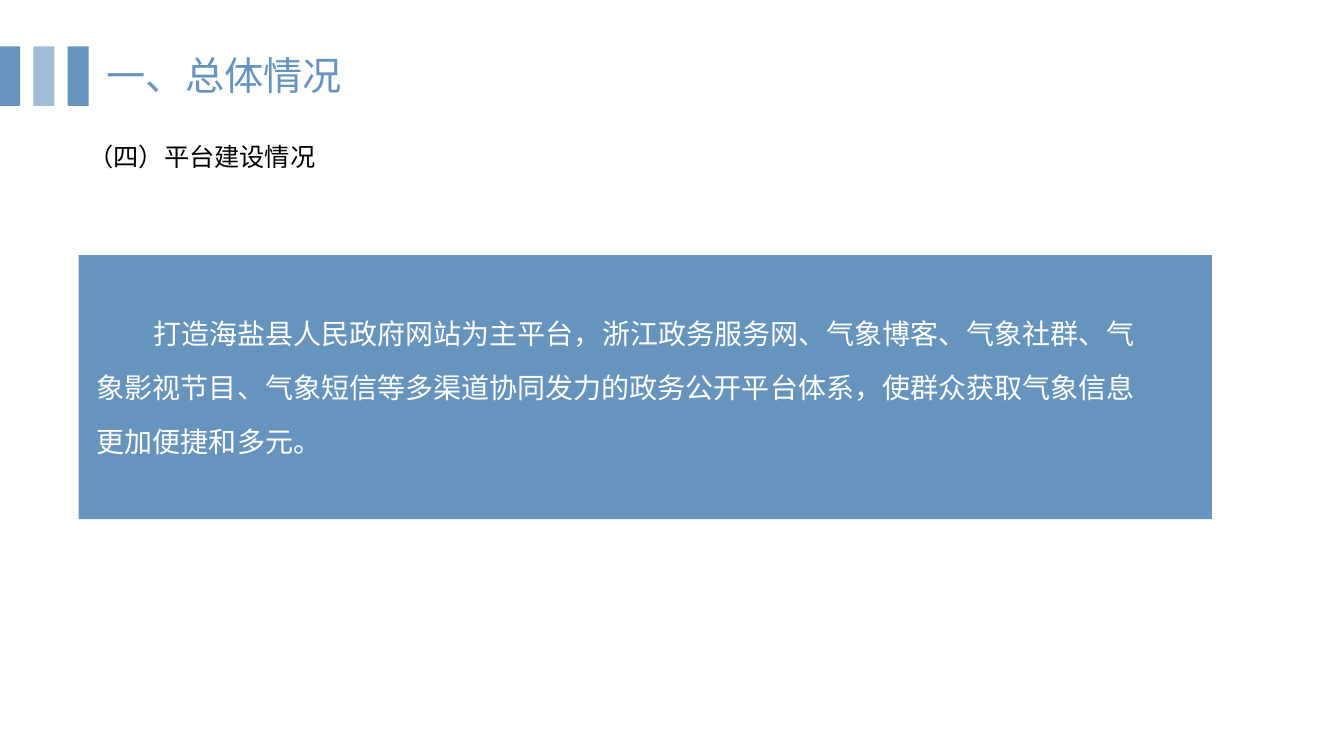
from dataclasses import dataclass

from lxml import etree
from pptx import Presentation
from pptx import util as u
from pptx.dml.color import RGBColor
from pptx.enum import shapes, text
from pptx.oxml import ns
from pptx.shapes.autoshape import Shape
from pptx.slide import Slide

EMU_PER_PX = 9144
FONT = "Noto Sans CJK SC"
BLUE = RGBColor(0x67, 0x94, 0xBD)
PALE_BLUE = RGBColor(0xA1, 0xBD, 0xD7)
WHITE = RGBColor(0xFF, 0xFF, 0xFF)
BLACK = RGBColor(0x00, 0x00, 0x00)


@dataclass(frozen=True)
class Block:
    left: int
    top: int
    width: int
    height: int
    color: RGBColor


STRIPES = [
    Block(34 * index - 1, 46, 21, 59, color)
    for index, color in enumerate((BLUE, PALE_BLUE, BLUE))
]
PANEL = Block(78, 253, 1124, 262, BLUE)


def px(length: int) -> u.Emu:
    return u.Emu(length * EMU_PER_PX)


def draw_block(page: Slide, block: Block) -> None:
    box = page.shapes.add_shape(
        shapes.MSO_SHAPE.RECTANGLE,
        px(block.left), px(block.top), px(block.width), px(block.height),
    )
    box.shadow.inherit = False
    box.fill.solid()
    box.fill.fore_color.rgb = block.color
    box.line.fill.background()


def place(box: Shape, left: int, top: int, width: int, height: int) -> Shape:
    box.left, box.top, box.width, box.height = map(px, (left, top, width, height))
    return box


def write(
    box: Shape,
    wording: str,
    *,
    size: int,
    color: RGBColor,
    inset_x: int = 10,
    inset_y: int = 5,
    indent: int = 0,
    line_spacing: float = 1.0,
) -> None:
    frame = box.text_frame
    frame.word_wrap = True
    frame.auto_size = text.MSO_AUTO_SIZE.NONE
    frame.vertical_anchor = text.MSO_ANCHOR.TOP
    frame.margin_left = frame.margin_right = px(inset_x)
    frame.margin_top = frame.margin_bottom = px(inset_y)
    para = frame.paragraphs[0]
    para.alignment = text.PP_ALIGN.LEFT
    para.line_spacing = line_spacing
    if indent:
        properties = para._p.get_or_add_pPr()
        properties.set("marL", "0")
        properties.set("indent", str(px(indent)))
    span = para.add_run()
    span.text = wording
    span.font.size = u.Pt(size)
    span.font.name = FONT
    span.font.color.rgb = color
    east_asian = etree.SubElement(span._r.get_or_add_rPr(), ns.qn("a:ea"))
    east_asian.set("typeface", FONT)


def main() -> None:
    deck = Presentation()
    deck.slide_width, deck.slide_height = px(1333), px(750)
    page = deck.slides.add_slide(deck.slide_layouts[5])

    title = place(page.shapes.title, 96, 46, 329, 57)
    write(title, "一、总体情况", size=28, color=BLUE)

    for block in (*STRIPES, PANEL):
        draw_block(page, block)

    statement = page.shapes.add_textbox(px(96), px(294), px(1038), px(162))
    write(
        statement,
        "打造海盐县人民政府网站为主平台，浙江政务服务网、气象博客、气象社群、"
        "气象影视节目、气象短信等多渠道协同发力的政务公开平台体系，"
        "使群众获取气象信息更加便捷和多元。",
        size=20, color=WHITE, inset_x=0, inset_y=0, indent=56,
        line_spacing=u.Pt(38.6),
    )

    subtitle = page.shapes.add_textbox(px(78), px(135), px(347), px(40))
    write(subtitle, "（四）平台建设情况", size=18, color=BLACK)

    deck.save("out.pptx")


if __name__ == "__main__":
    main()
